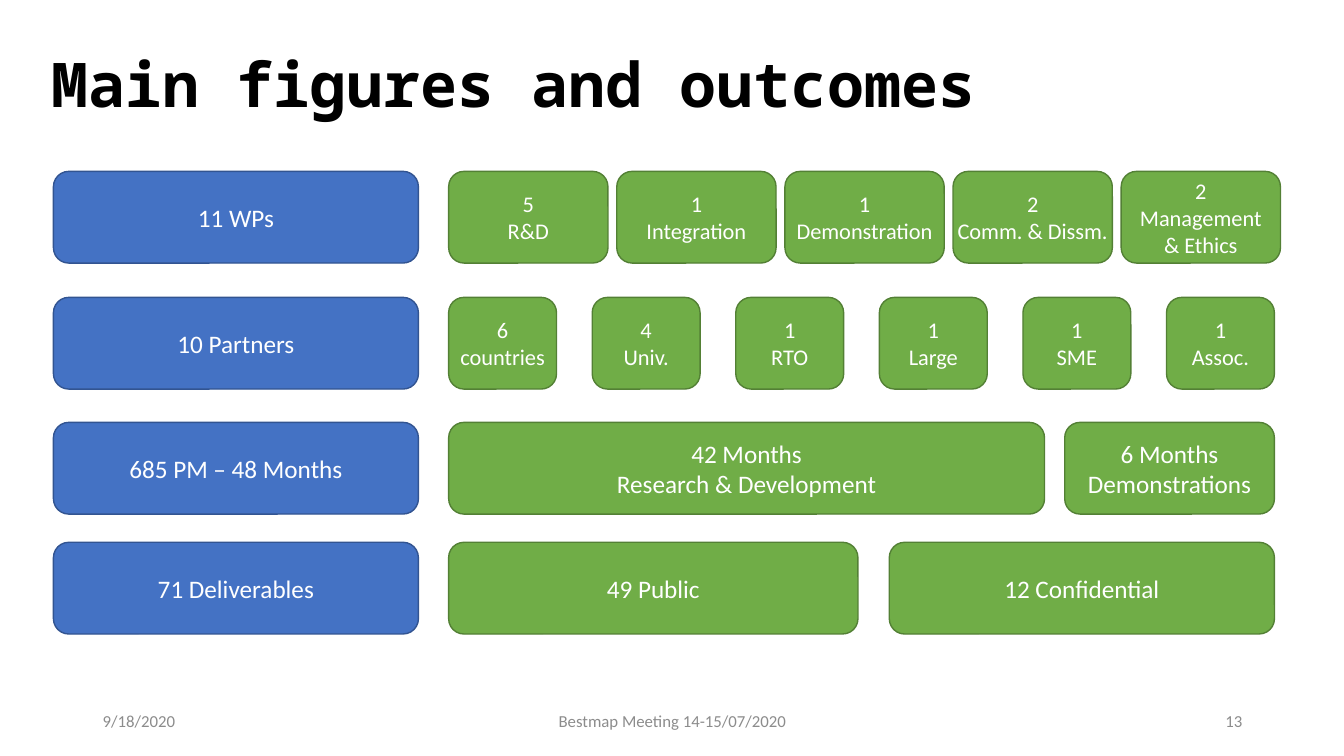
from pptx import Presentation
from pptx.dml.color import RGBColor
from pptx.enum.shapes import MSO_SHAPE
from pptx.enum.text import MSO_ANCHOR, PP_ALIGN
from pptx.util import Inches, Pt

ROUNDED = MSO_SHAPE.ROUNDED_RECTANGLE
MIDDLE = MSO_ANCHOR.MIDDLE
LEFT, CENTER, RIGHT = PP_ALIGN.LEFT, PP_ALIGN.CENTER, PP_ALIGN.RIGHT

BLUE, BLUE_EDGE = "4472C4", "325491"
GREEN, GREEN_EDGE = "70AD47", "538035"
WHITE, BLACK, GRAY = "FFFFFF", "000000", "8C8C8C"

TOTAL_LEFT, TOTAL_WIDTH = 0.53, 3.62
DETAIL_LEFT = 4.45
BOX_HEIGHT = 0.91
WP_TOP, PARTNER_TOP, MONTH_TOP, DELIVERABLE_TOP = 1.7, 2.95, 4.19, 5.38

TOTALS = [
    (WP_TOP, "11 WPs"),
    (PARTNER_TOP, "10 Partners"),
    (MONTH_TOP, "685 PM – 48 Months"),
    (DELIVERABLE_TOP, "71 Deliverables"),
]
WORK_PACKAGES = ["5\nR&D", "1\nIntegration", "1\nDemonstration",
                 "2\nComm. & Dissm.", "2\nManagement\n& Ethics"]
PARTNERS = ["6 countries", "4\nUniv.", "1\nRTO", "1\nLarge", "1\nSME", "1\nAssoc."]
SPLITS = [
    (DETAIL_LEFT, MONTH_TOP, 5.91, "42 Months\nResearch & Development"),
    (10.56, MONTH_TOP, 2.08, "6 Months\nDemonstrations"),
    (DETAIL_LEFT, DELIVERABLE_TOP, 4.06, "49 Public"),
    (8.82, DELIVERABLE_TOP, 3.82, "12 Confidential"),
]
FOOTER = [
    (0.92, 3, "9/18/2020", LEFT),
    (4.42, 4.5, "Bestmap Meeting 14-15/07/2020", CENTER),
    (9.42, 3, "13", RIGHT),
]


def rgb(hex_color):
    """Turn a hex string into a colour."""
    return RGBColor.from_string(hex_color)


def write(frame, text, size, color, align, font="Calibri", bold=False):
    """Fill a text frame and format every run in it."""
    frame.word_wrap = True
    frame.vertical_anchor = MIDDLE
    frame.text = text
    for paragraph in frame.paragraphs:
        paragraph.alignment = align
        for run in paragraph.runs:
            run.font.name = font
            run.font.size = Pt(size)
            run.font.bold = bold
            run.font.color.rgb = rgb(color)


def add_label(slide, left, top, width, height, text, size, color, align, **style):
    """Add a plain text box and return its text frame."""
    label = slide.shapes.add_textbox(Inches(left), Inches(top), Inches(width), Inches(height))
    write(label.text_frame, text, size, color, align, **style)
    return label.text_frame


def add_box(slide, left, top, width, text, fill=GREEN, edge=GREEN_EDGE, size=18):
    """Add a rounded box with centred white text and return its text frame."""
    box = slide.shapes.add_shape(ROUNDED, Inches(left), Inches(top),
                                 Inches(width), Inches(BOX_HEIGHT))
    box.shadow.inherit = False
    box.fill.solid()
    box.fill.fore_color.rgb = rgb(fill)
    box.line.color.rgb = rgb(edge)
    box.line.width = Pt(1)
    write(box.text_frame, text, size, WHITE, CENTER)
    return box.text_frame


def add_box_row(slide, top, width, right_edge, texts):
    """Spread equal boxes without insets from the detail column to the right edge."""
    step = (right_edge - width - DETAIL_LEFT) / (len(texts) - 1)
    for index, text in enumerate(texts):
        frame = add_box(slide, DETAIL_LEFT + index * step, top, width, text, size=16)
        frame.margin_left = frame.margin_right = 0
        frame.margin_top = frame.margin_bottom = 0


def main():
    """Build the slide of project figures."""
    deck = Presentation()
    deck.slide_width, deck.slide_height = Inches(13.33), Inches(7.5)
    slide = deck.slides.add_slide(deck.slide_layouts[6])

    title = add_label(slide, 0.41, 0.27, 11.38, 1.2, "Main figures and outcomes",
                      44, BLACK, LEFT, font="Noto Sans Mono", bold=True)
    title.paragraphs[0].line_spacing = 0.9
    for left, width, text, align in FOOTER:
        add_label(slide, left, 6.95, width, 0.4, text, 12, GRAY, align)

    for top, text in TOTALS:
        add_box(slide, TOTAL_LEFT, top, TOTAL_WIDTH, text, BLUE, BLUE_EDGE)
    add_box_row(slide, WP_TOP, 1.58, 12.7, WORK_PACKAGES)
    add_box_row(slide, PARTNER_TOP, 1.07, 12.64, PARTNERS)
    for left, top, width, text in SPLITS:
        add_box(slide, left, top, width, text)

    deck.save("out.pptx")


if __name__ == "__main__":
    main()
